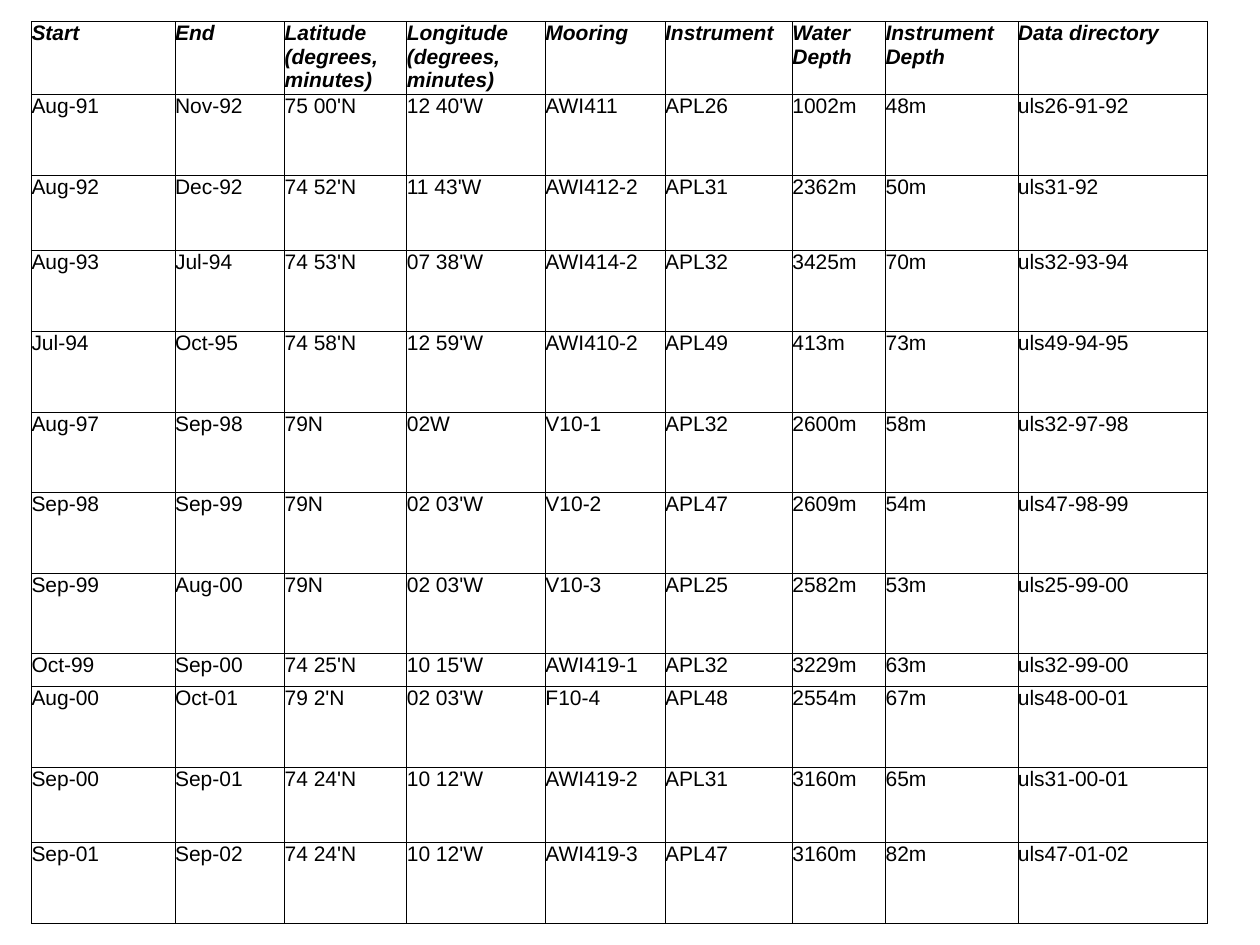
"""Build a slide with a table of sonar mooring deployments."""
from lxml.etree import SubElement
from pptx import Presentation
from pptx.dml.color import RGBColor
from pptx.oxml.ns import qn
from pptx.util import Inches, Pt

HEADERS = ["Start", "End", "Latitude (degrees, minutes)", "Longitude (degrees, minutes)",
           "Mooring", "Instrument", "Water Depth", "Instrument Depth", "Data directory"]
DEPLOYMENTS = [
    ["Aug-91", "Nov-92", "75 00'N", "12 40'W", "AWI411", "APL26", "1002m", "48m", "uls26-91-92"],
    ["Aug-92", "Dec-92", "74 52'N", "11 43'W", "AWI412-2", "APL31", "2362m", "50m", "uls31-92"],
    ["Aug-93", "Jul-94", "74 53'N", "07 38'W", "AWI414-2", "APL32", "3425m", "70m", "uls32-93-94"],
    ["Jul-94", "Oct-95", "74 58'N", "12 59'W", "AWI410-2", "APL49", "413m", "73m", "uls49-94-95"],
    ["Aug-97", "Sep-98", "79N", "02W", "V10-1", "APL32", "2600m", "58m", "uls32-97-98"],
    ["Sep-98", "Sep-99", "79N", "02 03'W", "V10-2", "APL47", "2609m", "54m", "uls47-98-99"],
    ["Sep-99", "Aug-00", "79N", "02 03'W", "V10-3", "APL25", "2582m", "53m", "uls25-99-00"],
    ["Oct-99", "Sep-00", "74 25'N", "10 15'W", "AWI419-1", "APL32", "3229m", "63m", "uls32-99-00"],
    ["Aug-00", "Oct-01", "79 2'N", "02 03'W", "F10-4", "APL48", "2554m", "67m", "uls48-00-01"],
    ["Sep-00", "Sep-01", "74 24'N", "10 12'W", "AWI419-2", "APL31", "3160m", "65m", "uls31-00-01"],
    ["Sep-01", "Sep-02", "74 24'N", "10 12'W", "AWI419-3", "APL47", "3160m", "82m", "uls47-01-02"],
]
COLUMN_WIDTHS = [1.14, 0.87, 0.97, 1.1, 0.95, 1.01, 0.74, 1.05, 1.5]
ROW_HEIGHTS = [0.58, 0.64, 0.6] + [0.64] * 5 + [0.26, 0.64, 0.6, 0.64]
BLACK = "000000"


def color(value):
    return RGBColor.from_string(value)


def add_borders(cell, value, width):
    properties = cell._tc.get_or_add_tcPr()
    for side in ("a:lnL", "a:lnR", "a:lnT", "a:lnB"):
        line = SubElement(properties, qn(side), w=str(Pt(width)))
        fill = SubElement(line, qn("a:solidFill"))
        SubElement(fill, qn("a:srgbClr"), val=value)


presentation = Presentation()
presentation.slide_width = Inches(10)
presentation.slide_height = Inches(7.5)
slide = presentation.slides.add_slide(presentation.slide_layouts[6])

rows = [HEADERS] + DEPLOYMENTS
table = slide.shapes.add_table(
    len(rows), len(HEADERS), Inches(0.25), Inches(0.17),
    Inches(sum(COLUMN_WIDTHS)), Inches(sum(ROW_HEIGHTS))).table
table.first_row = False
table.horz_banding = False

for column, width in zip(table.columns, COLUMN_WIDTHS):
    column.width = Inches(width)
for row, height in zip(table.rows, ROW_HEIGHTS):
    row.height = Inches(height)

for row_index, values in enumerate(rows):
    for column_index, value in enumerate(values):
        cell = table.cell(row_index, column_index)
        cell.margin_left = cell.margin_right = Inches(0)
        cell.margin_top = cell.margin_bottom = Inches(0)
        add_borders(cell, BLACK, 0.5)
        cell.fill.background()
        paragraph = cell.text_frame.paragraphs[0]
        paragraph.text = value
        font = paragraph.runs[0].font
        font.name = "Arial"
        font.size = Pt(12)
        font.bold = font.italic = row_index == 0
        font.color.rgb = color(BLACK)

presentation.save("out.pptx")
